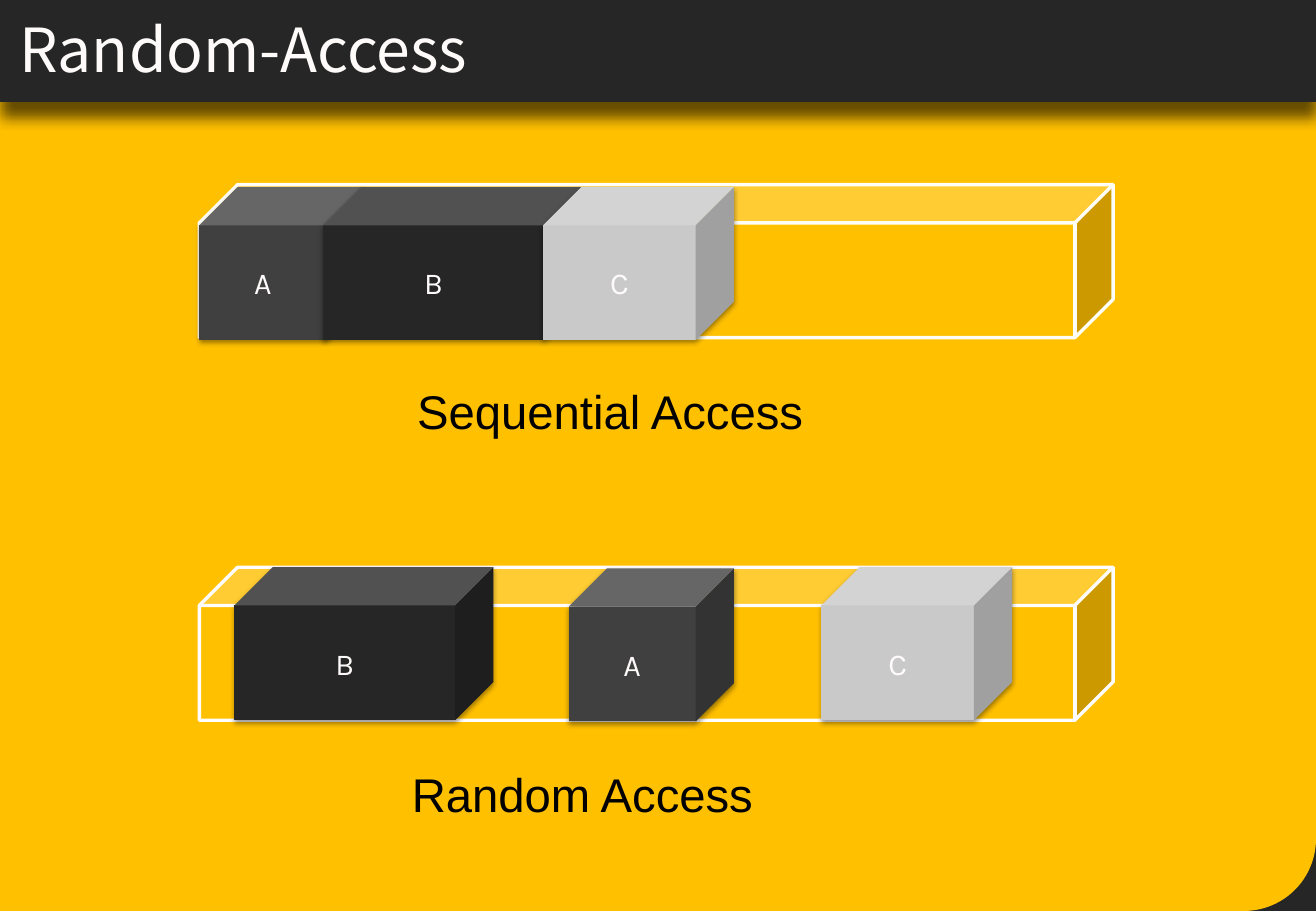
import pptx
import pptx.util
import pptx.dml.color
import pptx.enum.shapes
import pptx.enum.text
import lxml.etree

Inches, Pt = pptx.util.Inches, pptx.util.Pt
RGB = pptx.dml.color.RGBColor
SHAPE = pptx.enum.shapes.MSO_SHAPE
ALIGN = pptx.enum.text.PP_ALIGN
MIDDLE = pptx.enum.text.MSO_ANCHOR.MIDDLE

DARK = RGB(0x26, 0x26, 0x26)
GRAY = RGB(0x40, 0x40, 0x40)
LIGHT = RGB(0xC9, 0xC9, 0xC9)
GOLD = RGB(0xFF, 0xC0, 0x00)
WHITE = RGB(0xFF, 0xFB, 0xFB)
BLACK = RGB(0, 0, 0)

WIDE, HIGH, BAR = 10.83, 7.5, 0.84
BODY = HIGH - BAR
TITLE = "Random-Access"

# Width and colour of each data block
BLOCKS = {"A": (1.36, GRAY), "B": (2.13, DARK), "C": (1.57, LIGHT)}
DEPTH = 1.26
TRACK = (1.64, 7.52)

# Track top, track edge, then (block, left, top) from back to front
ROWS = [
    (1.52, RGB(0xFF, 0xFF, 0xF7),
     [("A", 1.64, 1.54), ("B", 2.66, 1.54), ("C", 4.47, 1.54)]),
    (4.67, RGB(0xFF, 0xFD, 0xFD),
     [("A", 4.68, 4.68), ("B", 1.93, 4.67), ("C", 6.76, 4.67)]),
]
LABELS = [
    ("Random Access", (3.29, 6.25, 4.09, 0.57), ALIGN.LEFT),
    ("Sequential Access", (2.66, 3.1, 4.72, 0.57), ALIGN.CENTER),
]

# Shadow blur, distance (points) and opacity (percent)
BLOCK_SHADE = (3.1, 1.6, 38)
BAR_SHADE = (8, 9, 60)


def shade(shape, blur, dist, alpha):
    """Give the shape a black shadow that falls straight down."""
    space = "http://schemas.openxmlformats.org/drawingml/2006/main"
    effect = shape.element.spPr.find(f"{{{space}}}effectLst")
    effect.append(lxml.etree.fromstring(
        f'<a:outerShdw xmlns:a="{space}" blurRad="{Pt(blur)}" '
        f'dist="{Pt(dist)}" dir="5400000" algn="t" rotWithShape="0">'
        f'<a:srgbClr val="000000"><a:alpha val="{alpha * 1000}"/>'
        '</a:srgbClr></a:outerShdw>'))


def draw(slide, kind, box, fill, edge=None):
    shape = slide.shapes.add_shape(kind, *map(Inches, box))
    shape.shadow.inherit = False
    shape.fill.solid()
    shape.fill.fore_color.rgb = fill
    if edge:
        shape.line.color.rgb = edge
        shape.line.width = Pt(2)
    else:
        shape.line.fill.background()
    return shape


def write(frame, text, size, face, color, align):
    frame.word_wrap = True
    para = frame.paragraphs[0]
    para.alignment = align
    run = para.add_run()
    run.text = text
    for name, value in {"size": Pt(size), "name": face}.items():
        setattr(run.font, name, value)
    run.font.color.rgb = color


def back(slide):
    slide.background.fill.solid()
    slide.background.fill.fore_color.rgb = WHITE
    draw(slide, SHAPE.RECTANGLE, (0, BAR, WIDE, BODY), DARK)
    # A quarter turn brings the round corner to the bottom right
    panel = draw(slide, SHAPE.ROUND_1_RECTANGLE,
                 ((WIDE - BODY) / 2, BAR + (BODY - WIDE) / 2, BODY, WIDE),
                 GOLD)
    panel.rotation = 90
    panel.adjustments[0] = 0.089
    bar = draw(slide, SHAPE.RECTANGLE, (0, 0, WIDE, BAR), DARK)
    shade(bar, *BAR_SHADE)


def head(slide):
    title = slide.shapes.title
    spot = {"left": 0.06, "top": -0.11, "width": 9.75, "height": 1.01}
    for name, value in spot.items():
        setattr(title, name, Inches(value))
    title.text_frame.vertical_anchor = MIDDLE
    write(title.text_frame, TITLE, 36, "Noto Sans CJK SC", WHITE, ALIGN.LEFT)
    title.element.getparent().append(title.element)


def main():
    deck = pptx.Presentation()
    deck.slide_width, deck.slide_height = Inches(WIDE), Inches(HIGH)
    slide = deck.slides.add_slide(deck.slide_layouts[5])
    back(slide)
    head(slide)

    left, width = TRACK
    for top, edge, _ in ROWS:
        draw(slide, SHAPE.CUBE, (left, top, width, DEPTH), GOLD, edge)

    for _, _, blocks in ROWS:
        for name, left, top in blocks:
            width, fill = BLOCKS[name]
            cube = draw(slide, SHAPE.CUBE, (left, top, width, DEPTH), fill)
            shade(cube, *BLOCK_SHADE)
            cube.text_frame.vertical_anchor = MIDDLE
            write(cube.text_frame, name, 18, "Karla", WHITE, ALIGN.CENTER)

    for text, box, align in LABELS:
        label = slide.shapes.add_textbox(*map(Inches, box))
        write(label.text_frame, text, 28, "Arial", BLACK, align)

    deck.save("out.pptx")


if __name__ == "__main__":
    main()
